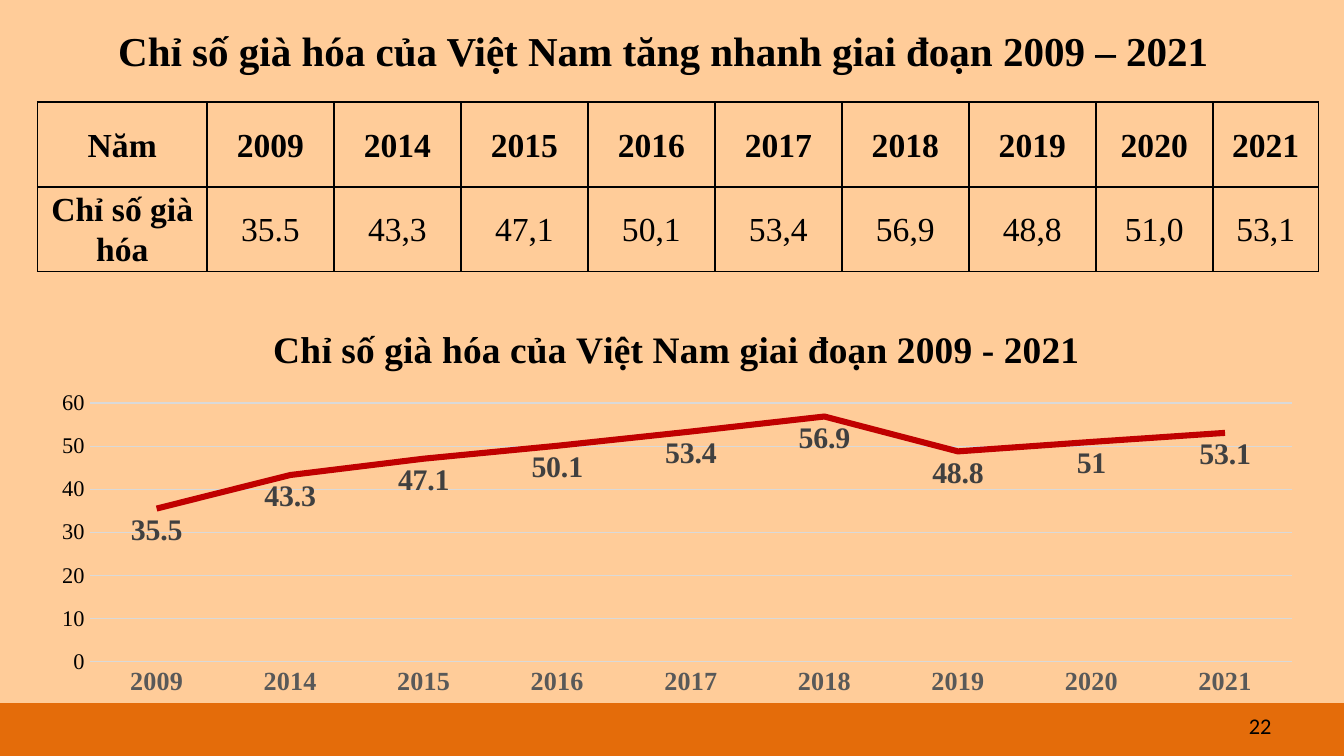
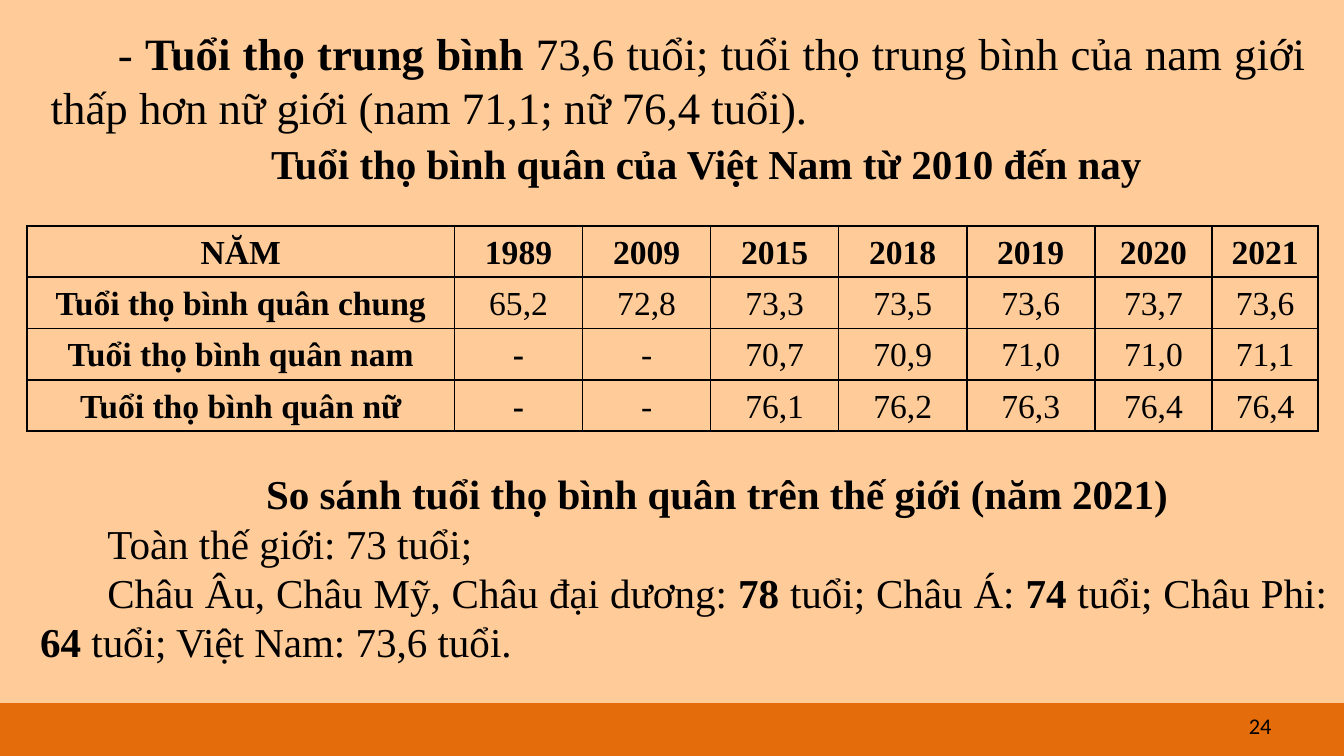
from dataclasses import dataclass

from lxml.etree import SubElement
from pptx import Presentation
from pptx.chart.data import CategoryChartData
from pptx.dml.color import RGBColor
from pptx.enum.chart import XL_CHART_TYPE, XL_LABEL_POSITION as LabelPosition
from pptx.enum.chart import XL_MARKER_STYLE, XL_TICK_MARK
from pptx.enum.shapes import MSO_SHAPE
from pptx.enum.text import MSO_ANCHOR as Anchor, MSO_AUTO_SIZE, PP_ALIGN as Align
from pptx.oxml.ns import qn
from pptx.util import Cm, Pt


@dataclass(frozen=True)
class Theme:
    band: str = "E46C0A"
    panel: str = "FFCC99"
    text: str = "000000"
    line: str = "C00000"
    grid: str = "D9D9D9"
    label: str = "404040"
    axis: str = "595959"
    serif: str = "Times New Roman"
    sans: str = "Calibri"
    intro_size: int = 24
    title_size: int = 22
    chart_title_size: int = 20
    table_size: int = 18
    label_size: int = 16
    category_size: int = 14
    small_size: int = 12


THEME = Theme()

AGEING_TITLE = "Chỉ số già hóa của Việt Nam tăng nhanh giai đoạn 2009 – 2021"
AGEING_ROWS = [
    ["Năm", "2009", "2014", "2015", "2016", "2017", "2018", "2019", "2020", "2021"],
    ["Chỉ số già hóa", "35.5", "43,3", "47,1", "50,1", "53,4", "56,9", "48,8", "51,0", "53,1"],
]
AGEING_COLUMNS = [3.2] + [2.4] * 7 + [2.21, 2.0]
CHART_TITLE = "Chỉ số già hóa của Việt Nam giai đoạn 2009 - 2021"

LIFE_TITLE = "Tuổi thọ bình quân của Việt Nam từ 2010 đến nay"
LIFE_INTRO = (
    "- *Tuổi thọ trung bình *73,6 tuổi; tuổi thọ trung bình của nam giới "
    "thấp hơn nữ giới (nam 71,1; nữ 76,4 tuổi)."
)
LIFE_ROWS = [
    ["NĂM", "1989", "2009", "2015", "2018", "2019", "2020", "2021"],
    ["Tuổi thọ bình quân chung", "65,2", "72,8", "73,3", "73,5", "73,6", "73,7", "73,6"],
    ["Tuổi thọ bình quân nam", "*-*", "-", "70,7", "70,9", "71,0", "71,0", "71,1"],
    ["Tuổi thọ bình quân nữ", "*-*", "-", "76,1", "76,2", "76,3", "76,4", "76,4"],
]
LIFE_COLUMNS = [8.08] + [2.42] * 5 + [2.22, 2.0]
WORLD_LINES = [
    ("*So sánh tuổi thọ bình quân trên thế giới (năm 2021)*", Align.CENTER),
    ("Toàn thế giới: 73 tuổi;", Align.JUSTIFY),
    (
        "Châu Âu, Châu Mỹ, Châu đại dương: *78 *tuổi; Châu Á: *74 *tuổi; "
        "Châu Phi: *64 *tuổi; Việt Nam: 73,6 tuổi.",
        Align.JUSTIFY,
    ),
]


def rgb(value):
    return RGBColor.from_string(value)


def style_font(font, size, color=THEME.text, name=THEME.serif, bold=None):
    font.name = name
    font.size = Pt(size)
    font.color.rgb = rgb(color)
    font.bold = bold


def write(paragraph, text, size, align, name=THEME.serif, indent=0, after=0):
    paragraph.alignment = align
    paragraph.space_before = Pt(0)
    paragraph.space_after = Pt(after)
    style_font(paragraph.font, size, name=name)
    if indent:
        properties = paragraph._p.get_or_add_pPr()
        properties.set("marL", "0")
        properties.set("indent", str(Cm(indent)))
    for position, part in enumerate(text.split("*")):
        if part:
            run = paragraph.add_run()
            run.text = part
            run.font.bold = position % 2 == 1


def place(shape, box):
    shape.left, shape.top, shape.width, shape.height = (Cm(value) for value in box)


def set_frame(frame, anchor=Anchor.TOP):
    frame.word_wrap = True
    frame.auto_size = MSO_AUTO_SIZE.NONE
    frame.vertical_anchor = anchor


def add_text(slide, box, lines, size, anchor=Anchor.TOP, **options):
    frame = slide.shapes.add_textbox(*(Cm(value) for value in box)).text_frame
    set_frame(frame, anchor)
    for number, (text, align) in enumerate(lines):
        paragraph = frame.add_paragraph() if number else frame.paragraphs[0]
        write(paragraph, text, size, align, **options)


def add_slide(presentation, title, box, align, number):
    slide = presentation.slides.add_slide(presentation.slide_layouts[5])
    place(slide.shapes.title, box)
    frame = slide.shapes.title.text_frame
    set_frame(frame)
    write(frame.paragraphs[0], f"*{title}*", THEME.title_size, align, indent=1.27, after=12)
    add_text(slide, (18.36, 13.34, 5.92, 0.76), [(number, Align.RIGHT)],
             THEME.small_size, Anchor.MIDDLE, name=THEME.sans)
    return slide


def add_panel(slide):
    box = (Cm(value) for value in (-0.03, -0.05, 25.45, 13.34))
    panel = slide.shapes.add_shape(MSO_SHAPE.RECTANGLE, *box)
    panel.shadow.inherit = False
    panel.fill.solid()
    panel.fill.fore_color.rgb = rgb(THEME.panel)
    panel.line.fill.background()
    panel._element.nvSpPr.cNvPr.set("id", "99")
    slide.slide_layout.shapes._spTree.insert(2, panel._element)


def set_borders(cell):
    properties = cell._tc.get_or_add_tcPr()
    for side in ("lnL", "lnR", "lnT", "lnB"):
        border = SubElement(properties, qn(f"a:{side}"), w=str(Pt(1)))
        fill = SubElement(border, qn("a:solidFill"))
        SubElement(fill, qn("a:srgbClr"), val=THEME.text)


def add_table(slide, left, top, rows, columns, row_height):
    table = slide.shapes.add_table(
        len(rows), len(columns), Cm(left), Cm(top),
        Cm(sum(columns)), Cm(row_height * len(rows)),
    ).table
    table.first_row = table.horz_banding = False
    for column, width in zip(table.columns, columns):
        column.width = Cm(width)
    for r, values in enumerate(rows):
        table.rows[r].height = Cm(row_height)
        for c, value in enumerate(values):
            cell = table.cell(r, c)
            set_borders(cell)
            cell.fill.background()
            cell.vertical_anchor = Anchor.MIDDLE
            cell.margin_left = cell.margin_right = Cm(0.18)
            cell.margin_top = cell.margin_bottom = 0
            paragraph = cell.text_frame.paragraphs[0]
            text = f"*{value}*" if r == 0 or c == 0 else value
            write(paragraph, text, THEME.table_size, Align.CENTER)
            paragraph.line_spacing = 1.07


def style_line(line, color, width):
    line.color.rgb = rgb(color)
    line.width = Pt(width)


def add_ageing_chart(slide):
    years, values = (row[1:] for row in AGEING_ROWS)
    data = CategoryChartData()
    data.categories = years
    data.add_series(CHART_TITLE, [float(value.replace(",", ".")) for value in values])
    box = (Cm(value) for value in (0.69, 5.74, 24.21, 7.57))
    chart = slide.shapes.add_chart(XL_CHART_TYPE.LINE, *box, data).chart
    style_font(chart.font, 10, name=THEME.sans)
    chart.has_legend = False
    chart.has_title = True
    title = chart.chart_title.text_frame
    title.text = CHART_TITLE
    style_font(title.paragraphs[0].runs[0].font, THEME.chart_title_size, bold=True)

    category_axis, value_axis = chart.category_axis, chart.value_axis
    for axis in (category_axis, value_axis):
        axis.major_tick_mark = axis.minor_tick_mark = XL_TICK_MARK.NONE
    style_font(category_axis.tick_labels.font, THEME.category_size, THEME.axis, bold=True)
    style_font(value_axis.tick_labels.font, THEME.small_size, bold=False)
    style_line(category_axis.format.line, THEME.grid, 0.75)
    value_axis.format.line.fill.background()
    value_axis.minimum_scale, value_axis.maximum_scale, value_axis.major_unit = 0, 60, 10
    style_line(value_axis.major_gridlines.format.line, THEME.grid, 0.75)

    plot = chart.plots[0]
    plot.vary_by_categories = False
    series = plot.series[0]
    series.smooth = False
    series.marker.style = XL_MARKER_STYLE.NONE
    style_line(series.format.line, THEME.line, 3.25)
    labels = series.data_labels
    labels.show_value = True
    labels.position = LabelPosition.BELOW
    style_font(labels.font, THEME.label_size, THEME.label, bold=True)


def main():
    presentation = Presentation()
    presentation.slide_width, presentation.slide_height = Cm(25.4), Cm(14.29)
    background = presentation.slide_master.background.fill
    background.solid()
    background.fore_color.rgb = rgb(THEME.band)

    ageing = add_slide(presentation, AGEING_TITLE, (0.71, 0.36, 24.21, 1.19),
                       Align.JUSTIFY, "22")
    add_panel(ageing)
    add_table(ageing, 0.71, 1.93, AGEING_ROWS, AGEING_COLUMNS, 1.6)
    add_ageing_chart(ageing)

    life = add_slide(presentation, LIFE_TITLE, (0.51, 2.49, 24.41, 1.19),
                     Align.CENTER, "24")
    add_table(life, 0.51, 4.27, LIFE_ROWS, LIFE_COLUMNS, 0.97)
    add_text(life, (0.71, 0.36, 24.21, 2.31), [(LIFE_INTRO, Align.JUSTIFY)],
             THEME.intro_size, indent=1.27, after=12)
    add_text(life, (0.51, 8.74, 24.82, 4.01), WORLD_LINES, THEME.title_size, indent=1.27)
    presentation.save("out.pptx")


if __name__ == "__main__":
    main()
